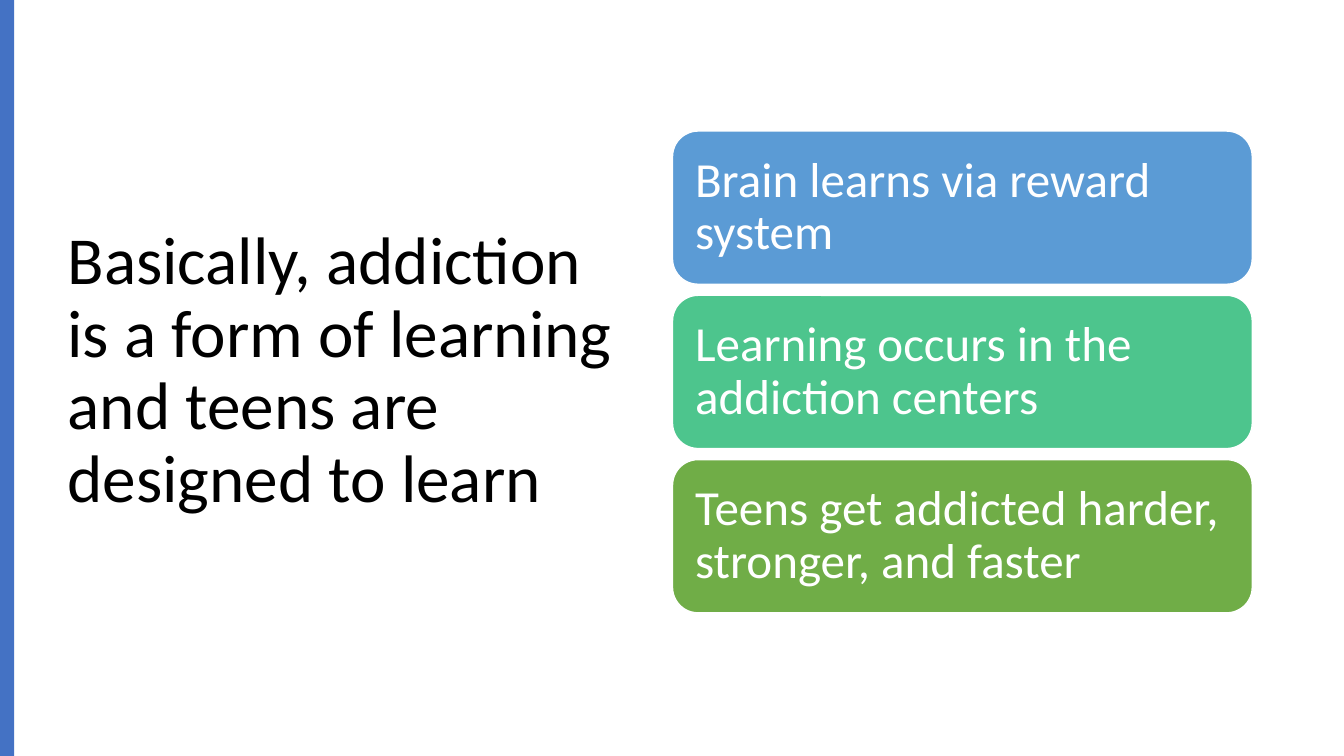
from pptx import Presentation
from pptx.dml.color import RGBColor
from pptx.enum.shapes import MSO_SHAPE
from pptx.enum.text import MSO_ANCHOR, PP_ALIGN
from pptx.util import Inches, Pt

COLORS = {
    "black": "000000",
    "white": "FFFFFF",
    "bar": "4472C4",
    "blue": "5B9BD5",
    "teal": "4DC58D",
    "green": "70AD47",
}
FONT = "Calibri"
CARDS = [
    ("Brain learns via reward system", "blue"),
    ("Learning occurs in the addiction centers", "teal"),
    ("Teens get addicted harder, stronger, and faster", "green"),
]
CARD_TOP, CARD_HEIGHT, CARD_PITCH = 1.3, 1.52, 1.63


def rgb(name):
    return RGBColor.from_string(COLORS[name])


def write(tf, text, size, color):
    """Set one left-aligned, vertically centred paragraph."""
    tf.text = text
    tf.word_wrap = True
    tf.vertical_anchor = MSO_ANCHOR.MIDDLE
    p = tf.paragraphs[0]
    p.alignment = PP_ALIGN.LEFT
    p.line_spacing = 0.9
    r = p.runs[0]
    r.font.name = FONT
    r.font.size = Pt(size)
    r.font.color.rgb = rgb(color)


def add_title(s, text):
    sp = s.shapes.title
    sp.left, sp.top = Inches(0.57), Inches(0.68)
    sp.width, sp.height = Inches(5.67), Inches(6.02)
    write(sp.text_frame, text, 48, "black")


def add_block(s, kind, left, top, width, height, color):
    sp = s.shapes.add_shape(kind, Inches(left), Inches(top),
                            Inches(width), Inches(height))
    sp.shadow.inherit = False
    sp.fill.solid()
    sp.fill.fore_color.rgb = rgb(color)
    sp.line.fill.background()
    return sp


def add_card(s, top, text, color):
    sp = add_block(s, MSO_SHAPE.ROUNDED_RECTANGLE, 6.67, top, 5.75,
                   CARD_HEIGHT, color)
    sp.line.color.rgb = rgb("white")
    sp.line.width = Pt(1)
    tf = sp.text_frame
    # The rounded outline already insets its text by about 0.07 inch
    tf.margin_left = tf.margin_right = Inches(0.15)
    tf.margin_top = tf.margin_bottom = Inches(0.15)
    write(tf, text, 35, color="white")


def main():
    prs = Presentation()
    prs.slide_width, prs.slide_height = Inches(13.33), Inches(7.5)
    s = prs.slides.add_slide(prs.slide_layouts[5])

    # Title and left accent bar
    add_title(s, "Basically, addiction is a form of learning "
                 "and teens are designed to learn")
    add_block(s, MSO_SHAPE.RECTANGLE, 0, 0, 0.14, 7.5, "bar")

    # Stacked cards
    for i, (text, color) in enumerate(CARDS):
        add_card(s, CARD_TOP + i * CARD_PITCH, text, color)

    prs.save("out.pptx")


if __name__ == "__main__":
    main()
